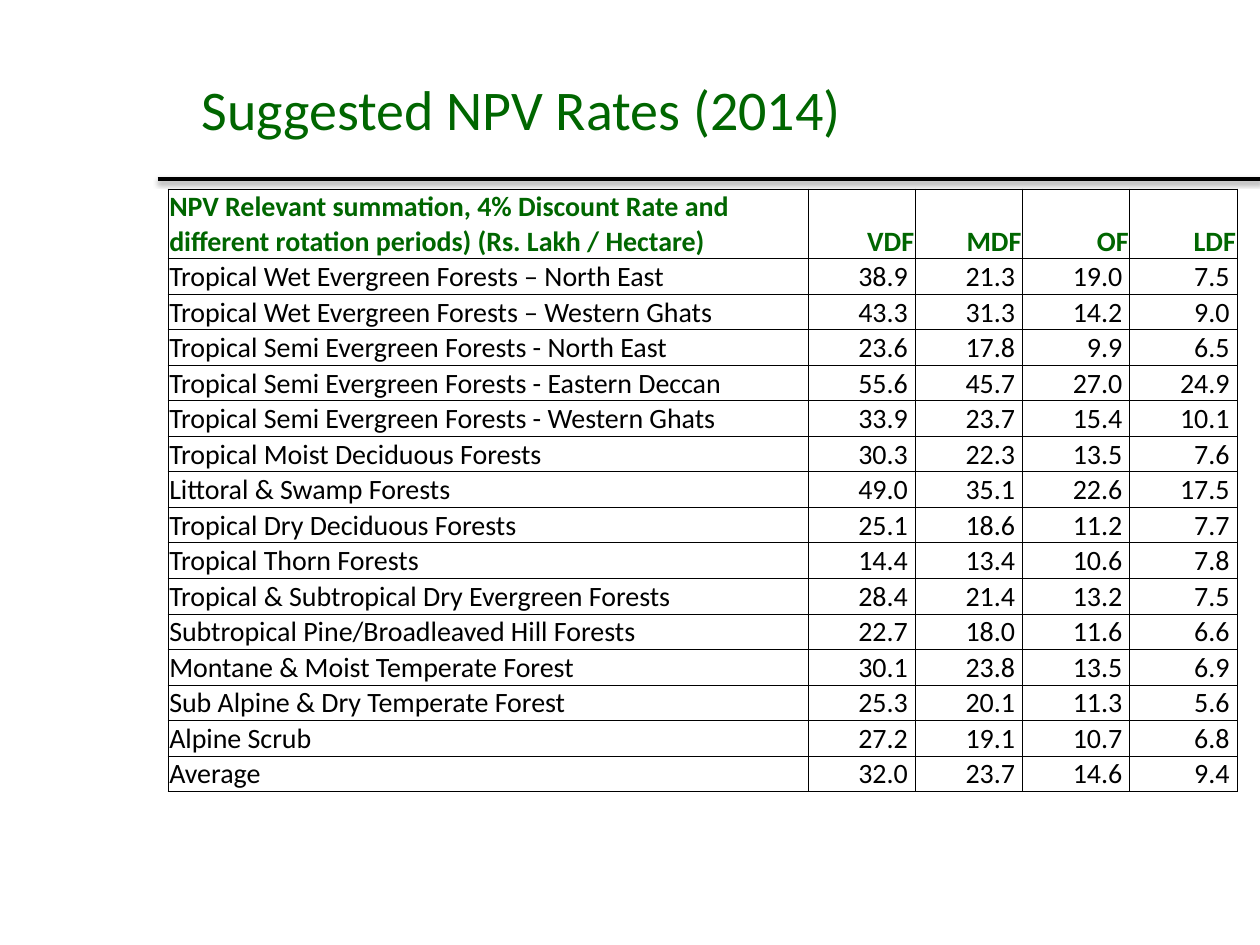
from lxml.etree import SubElement
from pptx import Presentation
from pptx.dml.color import RGBColor
from pptx.enum.shapes import MSO_CONNECTOR
from pptx.enum.text import MSO_ANCHOR, PP_ALIGN
from pptx.oxml.ns import qn
from pptx.util import Pt

COLORS = {"green": "006600", "black": "000000"}
FONT = "Calibri"
COLUMN_WIDTHS = [365.76, 61.3, 61.3, 61.3, 61.3]
HEADER_HEIGHT, ROW_HEIGHT = 39.5, 20.3

HEADINGS = [
    "NPV Relevant summation, 4% Discount Rate and different rotation periods) (Rs. Lakh / Hectare)",
    "VDF", "MDF", "OF", "LDF",
]
FOREST_RATES = [
    ("Tropical Wet Evergreen Forests – North East", 38.9, 21.3, 19.0, 7.5),
    ("Tropical Wet Evergreen Forests – Western Ghats", 43.3, 31.3, 14.2, 9.0),
    ("Tropical Semi Evergreen Forests - North East", 23.6, 17.8, 9.9, 6.5),
    ("Tropical Semi Evergreen Forests - Eastern Deccan", 55.6, 45.7, 27.0, 24.9),
    ("Tropical Semi Evergreen Forests - Western Ghats", 33.9, 23.7, 15.4, 10.1),
    ("Tropical Moist Deciduous Forests", 30.3, 22.3, 13.5, 7.6),
    ("Littoral & Swamp Forests", 49.0, 35.1, 22.6, 17.5),
    ("Tropical Dry Deciduous Forests", 25.1, 18.6, 11.2, 7.7),
    ("Tropical Thorn Forests", 14.4, 13.4, 10.6, 7.8),
    ("Tropical & Subtropical Dry Evergreen Forests", 28.4, 21.4, 13.2, 7.5),
    ("Subtropical Pine/Broadleaved Hill Forests", 22.7, 18.0, 11.6, 6.6),
    ("Montane & Moist Temperate Forest", 30.1, 23.8, 13.5, 6.9),
    ("Sub Alpine & Dry Temperate Forest", 25.3, 20.1, 11.3, 5.6),
    ("Alpine Scrub", 27.2, 19.1, 10.7, 6.8),
    ("Average", 32.0, 23.7, 14.6, 9.4),
]


def write_text(frame, text, size=16, color="black", bold=False, align=PP_ALIGN.LEFT):
    paragraph = frame.paragraphs[0]
    paragraph.alignment = align
    run = paragraph.add_run()
    run.text = text
    run.font.name = FONT
    run.font.size = Pt(size)
    run.font.bold = bold
    run.font.color.rgb = RGBColor.from_string(COLORS[color])


def add_title(slide, text):
    title = slide.shapes.title
    title.left, title.top, title.width, title.height = Pt(108), Pt(21.6), Pt(588), Pt(80.6)
    title.text_frame.vertical_anchor = MSO_ANCHOR.MIDDLE
    write_text(title.text_frame, text, size=32, color="green")


def add_rule(slide):
    rule = slide.shapes.add_connector(
        MSO_CONNECTOR.STRAIGHT, Pt(90), Pt(102.2), Pt(720), Pt(102.2))
    rule.line.color.rgb = RGBColor.from_string(COLORS["black"])
    rule.line.width = Pt(2)
    effects = SubElement(rule._element.spPr, qn("a:effectLst"))
    shadow = SubElement(effects, qn("a:outerShdw"), blurRad=str(Pt(3.1)),
                        dist=str(Pt(1.6)), dir="5400000", rotWithShape="0")
    tint = SubElement(shadow, qn("a:srgbClr"), val=COLORS["black"])
    SubElement(tint, qn("a:alpha"), val="38000")


def add_borders(cell):
    properties = cell._tc.get_or_add_tcPr()
    for position, side in enumerate(("lnL", "lnR", "lnT", "lnB")):
        border = SubElement(properties, qn(f"a:{side}"), w=str(Pt(0.5)))
        fill = SubElement(border, qn("a:solidFill"))
        SubElement(fill, qn("a:srgbClr"), val=COLORS["black"])
        properties.insert(position, border)


def format_cell(cell):
    cell.margin_left = cell.margin_right = cell.margin_top = Pt(0.72)
    cell.margin_bottom = Pt(0)
    cell.vertical_anchor = MSO_ANCHOR.BOTTOM
    cell.fill.background()
    add_borders(cell)


def add_rates_table(slide):
    rows = [HEADINGS] + [
        [forest] + [f" {rate:.1f} " for rate in rates] for forest, *rates in FOREST_RATES]
    heights = [HEADER_HEIGHT] + [ROW_HEIGHT] * len(FOREST_RATES)
    table = slide.shapes.add_table(
        len(rows), len(HEADINGS), Pt(96), Pt(108),
        Pt(sum(COLUMN_WIDTHS)), Pt(sum(heights))).table
    table.horz_banding = False
    for column, width in zip(table.columns, COLUMN_WIDTHS):
        column.width = Pt(width)
    for row_index, (texts, height) in enumerate(zip(rows, heights)):
        table.rows[row_index].height = Pt(height)
        is_header = row_index == 0
        for column_index, text in enumerate(texts):
            cell = table.cell(row_index, column_index)
            format_cell(cell)
            write_text(cell.text_frame, text, bold=is_header,
                       color="green" if is_header else "black",
                       align=PP_ALIGN.RIGHT if column_index else PP_ALIGN.LEFT)


def main():
    presentation = Presentation()
    presentation.slide_width, presentation.slide_height = Pt(720), Pt(540)
    slide = presentation.slides.add_slide(presentation.slide_layouts[5])
    add_rule(slide)
    add_title(slide, "Suggested NPV Rates (2014)")
    add_rates_table(slide)
    presentation.save("out.pptx")


if __name__ == "__main__":
    main()
